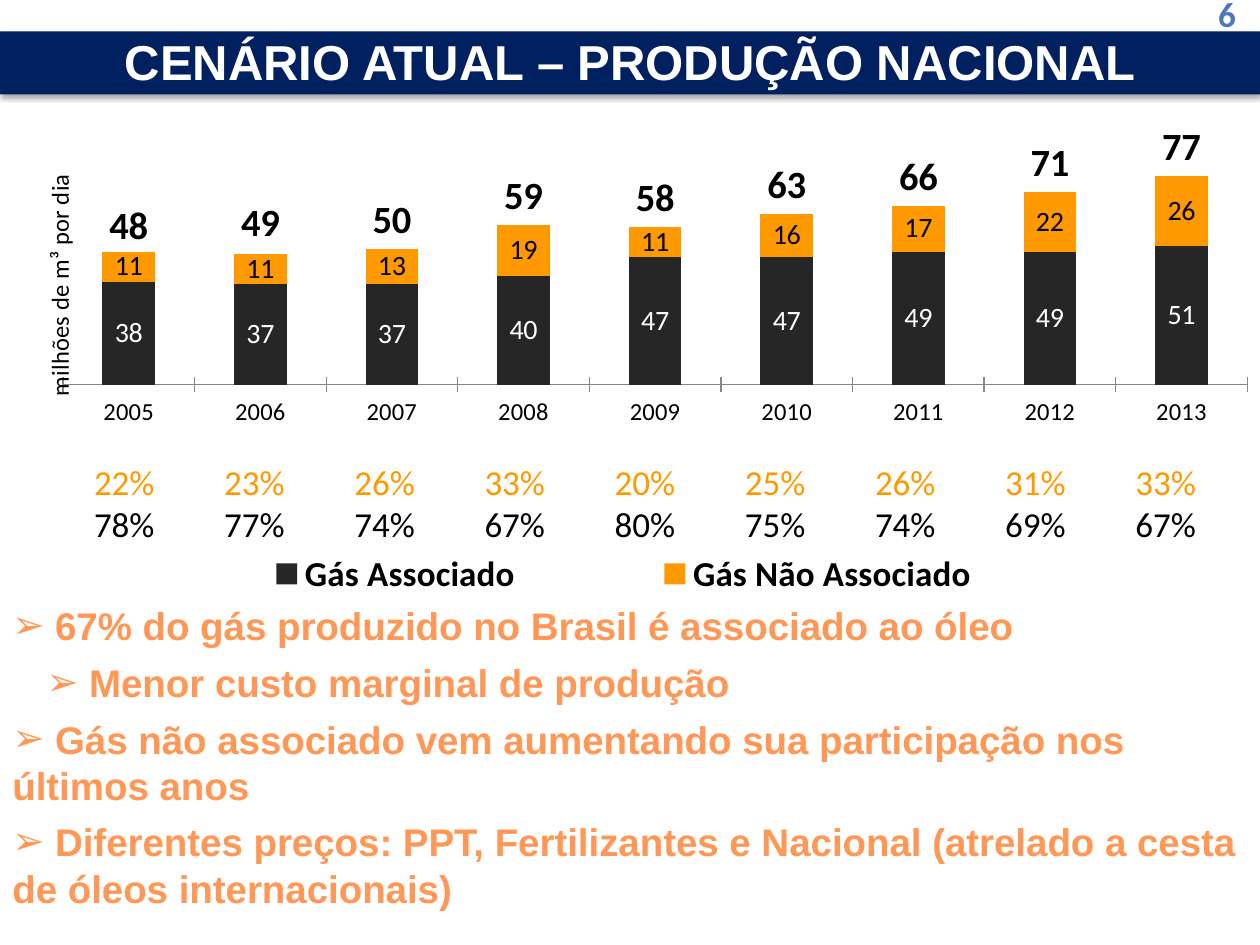
"""Build the slide on national gas production by type, 2005 to 2013."""
from lxml import etree
from pptx import Presentation
from pptx import util as u
from pptx.chart.data import CategoryChartData
from pptx.dml.color import RGBColor
from pptx.enum import chart as charts, shapes, text
from pptx.oxml import parse_xml
from pptx.oxml.ns import nsdecls, qn

COLORS = {"navy": "002060", "white": "FFFFFF", "black": "000000", "blue": "4D79BC",
          "orange": "FF9900", "charcoal": "262626", "peach": "FF9856", "gray": "868686"}
CELL = u.Inches(0.1)
COLUMNS, ROWS = 100, 75


def style(font, size, color, bold=False, name="Calibri"):
    font.size, font.bold, font.name = u.Pt(size), bold, name
    font.color.rgb = RGBColor.from_string(COLORS[color])


def set_layout(parent, index, target="", **shares):
    for old in parent.findall(qn("c:layout")):
        parent.remove(old)
    modes = "".join(f'<c:{axis}Mode val="edge"/>' for axis in "xy")
    sizes = "".join(f'<c:{key} val="{value}"/>' for key, value in shares.items())
    parent.insert(index, parse_xml(
        f'<c:layout {nsdecls("c")}><c:manualLayout>{target}{modes}{sizes}'
        '</c:manualLayout></c:layout>'))


presentation = Presentation()
presentation.slide_width, presentation.slide_height = COLUMNS * CELL, ROWS * CELL
slide = presentation.slides.add_slide(presentation.slide_layouts[5])

band = slide.shapes.add_shape(shapes.MSO_SHAPE.RECTANGLE, 0, int(2.5 * CELL), COLUMNS * CELL, 5 * CELL)
band.fill.solid()
band.fill.fore_color.rgb = RGBColor.from_string(COLORS["navy"])
band.line.fill.background()
band._element.spPr.append(parse_xml(
    f'<a:effectLst {nsdecls("a")}><a:outerShdw blurRad="39370" dist="22860" dir="5400000" rotWithShape="0">'
    '<a:srgbClr val="000000"><a:alpha val="35000"/></a:srgbClr></a:outerShdw></a:effectLst>'))

title = slide.shapes.title
band._element.addnext(title._element)
title.left, title.top, title.width, title.height = 0, int(2.1 * CELL), COLUMNS * CELL, int(5.5 * CELL)
title.text_frame.auto_size = text.MSO_AUTO_SIZE.NONE
title.text_frame.vertical_anchor = text.MSO_ANCHOR.MIDDLE
paragraph = title.text_frame.paragraphs[0]
paragraph.alignment = text.PP_ALIGN.CENTER
run = paragraph.add_run()
run.text = "CENÁRIO ATUAL – PRODUÇÃO NACIONAL"
style(run.font, 28, "white", True, "Arial")

number = slide.shapes.add_textbox(int(95.7 * CELL), int(-1.1 * CELL), int(3.9 * CELL), int(4.4 * CELL))
run = number.text_frame.paragraphs[0].add_run()
run.text = "6"
style(run.font, 20, "blue", True)

data = CategoryChartData(number_format="#,##0")
data.categories = [str(year) for year in range(2005, 2014)]
data.add_series("Gás Associado", [38, 37, 37, 40, 47, 47, 49, 49, 51])
data.add_series("Gás Não Associado", [11, 11, 13, 19, 11, 16, 17, 22, 26])
data.add_series("Total", [48, 49, 50, 59, 58, 63, 66, 71, 77])
chart = slide.shapes.add_chart(charts.XL_CHART_TYPE.COLUMN_STACKED, 0, int(7.8 * CELL),
                               COLUMNS * CELL, int(40.6 * CELL), data).chart
chart.has_title = False
style(chart.font, 10, "black")
bars = chart.plots[0]
bars.gap_width, bars.overlap, bars.vary_by_categories = 150, 100, False

category_axis, value_axis = chart.category_axis, chart.value_axis
category_axis.major_tick_mark = charts.XL_TICK_MARK.CROSS
category_axis.format.line.color.rgb = RGBColor.from_string(COLORS["gray"])
style(category_axis.tick_labels.font, 14, "black")
value_axis.minimum_scale, value_axis.maximum_scale, value_axis.major_unit = 0, 100, 25
value_axis.has_major_gridlines = False
value_axis.major_tick_mark = charts.XL_TICK_MARK.NONE
value_axis.tick_label_position = charts.XL_TICK_LABEL_POSITION.NONE
value_axis.format.line.fill.background()
axis_title = value_axis.axis_title
run = axis_title.text_frame.paragraphs[0].add_run()
run.text = "milhões de m³ por dia"
style(run.font, 14, "black")
body = axis_title._element.find(".//" + qn("a:bodyPr"))
body.set("rot", "-5400000")
body.set("vert", "horz")
set_layout(axis_title._element, 1, x=0.03, y=0.14)

plot_area = chart._chartSpace.chart.plotArea
total = plot_area.findall(".//" + qn("c:ser"))[2]
for flag in total.findall(qn("c:invertIfNegative")):
    total.remove(flag)
line_chart = parse_xml(
    f'<c:lineChart {nsdecls("c")}><c:grouping val="standard"/><c:varyColors val="0"/>'
    '<c:marker val="1"/><c:axId val="5001"/><c:axId val="5002"/></c:lineChart>')
line_chart.insert(2, total)
plot_area.find(qn("c:barChart")).addnext(line_chart)
last_axis = plot_area.find(qn("c:valAx"))
for kind, own, other, side, ending in (
        ("valAx", 5002, 5001, "r", '<c:crosses val="max"/>'),
        ("catAx", 5001, 5002, "b", '<c:crosses val="autoZero"/>')):
    limits = '<c:max val="100"/><c:min val="0"/>' if kind == "valAx" else ""
    last_axis.addnext(parse_xml(
        f'<c:{kind} {nsdecls("c")}><c:axId val="{own}"/><c:scaling><c:orientation val="minMax"/>{limits}'
        f'</c:scaling><c:delete val="1"/><c:axPos val="{side}"/><c:crossAx val="{other}"/>{ending}</c:{kind}>'))
set_layout(plot_area, 0, '<c:layoutTarget val="inner"/>', x=0.05, y=0.03, w=0.94, h=0.53)

associated, non_associated = chart.plots[0].series
totals = chart.plots[1].series[0]
for series, fill, size, color in ((associated, "charcoal", 16, "white"),
                                  (non_associated, "orange", 16, "black"),
                                  (totals, None, 22, "black")):
    if fill:
        series.format.fill.solid()
        series.format.fill.fore_color.rgb = RGBColor.from_string(COLORS[fill])
    labels = series.data_labels
    labels.show_value = True
    labels.number_format, labels.number_format_is_linked = "#,##0", False
    style(labels.font, size, color, series is totals)
totals.format.line.fill.background()
totals.marker.style = charts.XL_MARKER_STYLE.NONE
totals.smooth = False
totals.data_labels.position = charts.XL_LABEL_POSITION.ABOVE

chart.has_legend = True
legend = chart.legend
legend.position = charts.XL_LEGEND_POSITION.BOTTOM
legend.include_in_layout = False
style(legend.font, 20, "black", True)
legend._element.insert(1, parse_xml(
    f'<c:legendEntry {nsdecls("c")}><c:idx val="2"/><c:delete val="1"/></c:legendEntry>'))
set_layout(legend._element, 2, x=0.11, y=0.88, w=0.77, h=0.1)

non_associated_shares = [22, 23, 26, 33, 20, 25, 26, 31, 33]
shares = (("orange", non_associated_shares), ("black", [100 - share for share in non_associated_shares]))
table = slide.shapes.add_table(2, 9, int(4.7 * CELL), int(36.7 * CELL), 93 * CELL, int(6.7 * CELL)).table
table.first_row = table.horz_banding = False
for row, (color, values) in enumerate(shares):
    for column, value in enumerate(values):
        cell = table.cell(row, column)
        cell.fill.background()
        cell.margin_left = cell.margin_right = cell.margin_top = cell.margin_bottom = 0
        cell.vertical_anchor = text.MSO_ANCHOR.BOTTOM
        paragraph = cell.text_frame.paragraphs[0]
        paragraph.alignment = text.PP_ALIGN.CENTER
        run = paragraph.add_run()
        run.text = f"{value}%"
        style(run.font, 20, color)

findings = (
    (0, "67% do gás produzido no Brasil é associado ao óleo"),
    (2.7, "Menor custo marginal de produção"),
    (0, "Gás não associado vem aumentando sua participação nos últimos anos"),
    (0, "Diferentes preços: PPT, Fertilizantes e Nacional (atrelado a cesta de óleos internacionais)"),
)
frame = slide.shapes.add_textbox(0, int(47.3 * CELL), COLUMNS * CELL, int(25.7 * CELL)).text_frame
frame.word_wrap = True
for index, (indent, finding) in enumerate(findings):
    paragraph = frame.add_paragraph() if index else frame.paragraphs[0]
    paragraph.space_before = u.Pt(6)
    properties = paragraph._p.get_or_add_pPr()
    properties.set("marL", str(int(indent * CELL)))
    properties.set("indent", "0")
    etree.SubElement(properties, qn("a:buFont")).set("typeface", "Arial")
    etree.SubElement(properties, qn("a:buChar")).set("char", "➢")
    run = paragraph.add_run()
    run.text = " " + finding
    style(run.font, 22, "peach", True, "Arial")

presentation.save("out.pptx")
